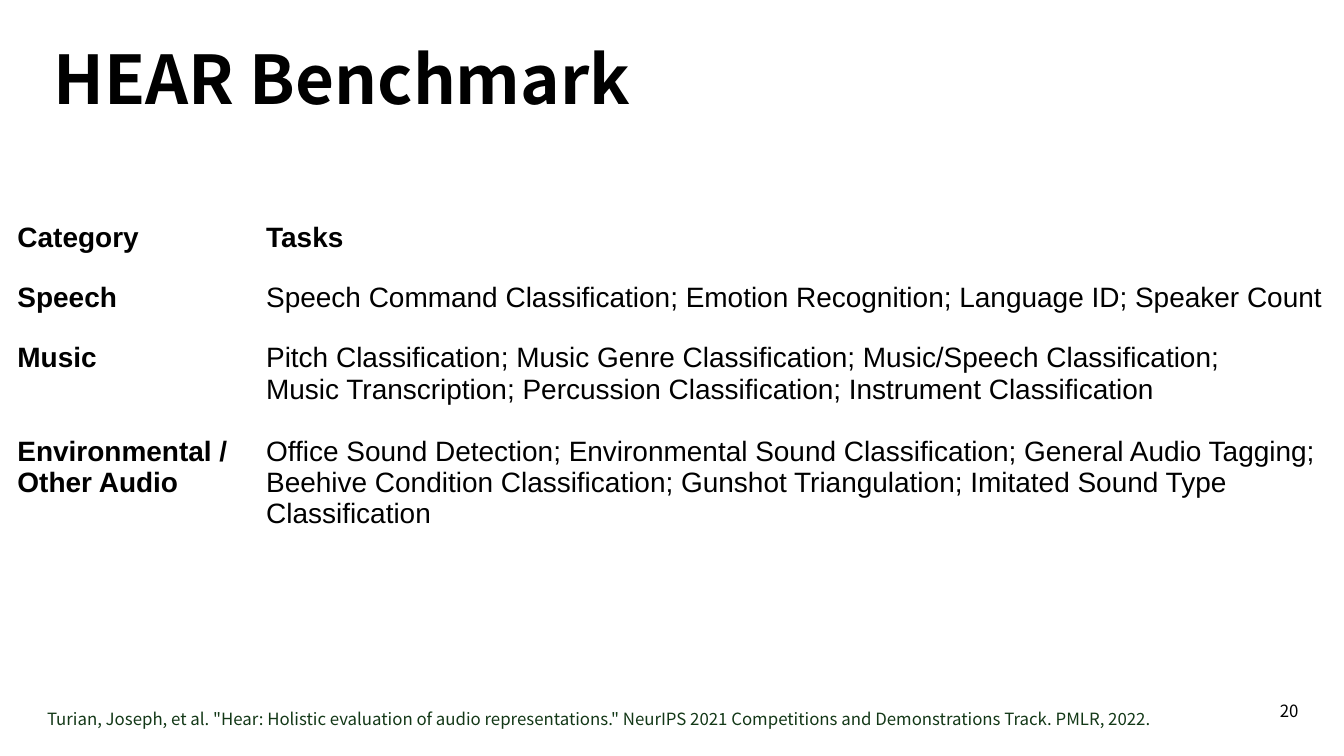
from dataclasses import dataclass

from pptx import Presentation
from pptx import util as u
from pptx.dml.color import RGBColor
from pptx.enum import text

COLORS = {"ink": "000000", "citation": "133817"}
SANS = "Noto Sans CJK KR"
INSET = u.Cm(0.25)


@dataclass
class Style:
    size: float
    font: str = SANS
    color: str = "ink"
    bold: bool = False


@dataclass
class Label:
    words: str
    left: float
    top: float
    width: float
    height: float
    style: Style
    align: text.PP_ALIGN = text.PP_ALIGN.LEFT
    anchor: text.MSO_ANCHOR = text.MSO_ANCHOR.TOP


@dataclass
class BenchmarkRow:
    category: str
    tasks: str
    height: float
    header: bool = False


LABELS = [
    Label("HEAR Benchmark", 0.76, 0.46, 23.85, 2.64, Style(36, bold=True)),
    Label("20", 20.62, 13.0, 4.17, 0.89, Style(9),
          text.PP_ALIGN.RIGHT, text.MSO_ANCHOR.MIDDLE),
    Label('Turian, Joseph, et al. "Hear: Holistic evaluation of audio representations." '
          "NeurIPS 2021 Competitions and Demonstrations Track. PMLR, 2022.",
          0.64, 13.21, 23.34, 0.89, Style(9, color="citation")),
]

ROWS = [
    BenchmarkRow("Category", "Tasks", 1.1, header=True),
    BenchmarkRow("Speech", "Speech Command Classification; Emotion Recognition; "
                 "Language ID; Speaker Count", 1.1),
    BenchmarkRow("Music", "Pitch Classification; Music Genre Classification; "
                 "Music/Speech Classification;\vMusic Transcription; "
                 "Percussion Classification; Instrument Classification", 1.68),
    BenchmarkRow("Environmental / Other Audio", "Office Sound Detection; "
                 "Environmental Sound Classification; General Audio Tagging; "
                 "Beehive Condition Classification; Gunshot Triangulation; "
                 "Imitated Sound Type Classification", 2.27),
]
COLUMN_WIDTHS = (4.7, 20.55)


def write(paragraph, words: str, style: Style) -> None:
    paragraph.text = words
    for run in paragraph.runs:
        run.font.size = u.Pt(style.size)
        run.font.name = style.font
        run.font.bold = style.bold
        run.font.color.rgb = RGBColor.from_string(COLORS[style.color])


def set_insets(holder) -> None:
    holder.margin_left = holder.margin_right = INSET
    holder.margin_top = holder.margin_bottom = INSET


def draw_label(slide, label: Label) -> None:
    box = slide.shapes.add_textbox(u.Cm(label.left), u.Cm(label.top),
                                   u.Cm(label.width), u.Cm(label.height))
    frame = box.text_frame
    frame.word_wrap = True
    frame.vertical_anchor = label.anchor
    set_insets(frame)
    paragraph = frame.paragraphs[0]
    write(paragraph, label.words, label.style)
    paragraph.alignment = label.align


def draw_benchmark(slide, rows: list[BenchmarkRow]) -> None:
    table = slide.shapes.add_table(
        len(rows), len(COLUMN_WIDTHS), u.Cm(0.08), u.Cm(3.86),
        u.Cm(sum(COLUMN_WIDTHS)), u.Cm(sum(row.height for row in rows))).table
    table.first_row = table.horz_banding = False
    for column, width in zip(table.columns, COLUMN_WIDTHS):
        column.width = u.Cm(width)
    for r, row in enumerate(rows):
        table.rows[r].height = u.Cm(row.height)
        for c, words in enumerate((row.category, row.tasks)):
            cell = table.cell(r, c)
            cell.fill.background()
            set_insets(cell)
            paragraph = cell.text_frame.paragraphs[0]
            write(paragraph, words, Style(15, "Arial", bold=row.header or c == 0))
            if row.header:
                paragraph.line_spacing = 1.15


def main() -> None:
    deck = Presentation()
    deck.slide_width, deck.slide_height = u.Cm(25.4), u.Cm(14.29)
    slide = deck.slides.add_slide(deck.slide_layouts[6])

    # Title, page number and citation
    for label in LABELS:
        draw_label(slide, label)

    # Categories and their tasks
    draw_benchmark(slide, ROWS)

    deck.save("out.pptx")


if __name__ == "__main__":
    main()
